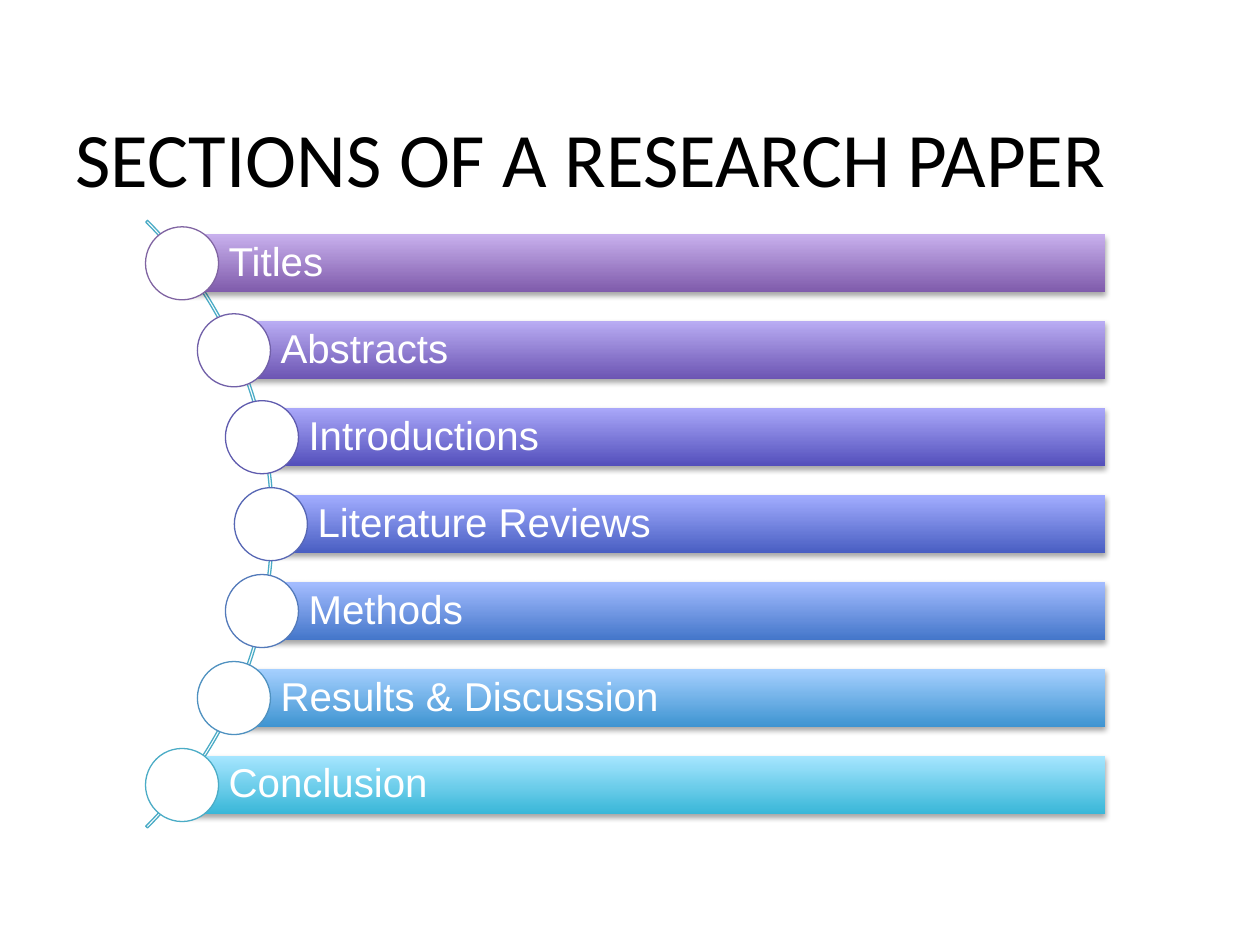
import math
from dataclasses import dataclass

from lxml import etree
from pptx import Presentation
from pptx.dml.color import RGBColor
from pptx.enum.shapes import MSO_SHAPE
from pptx.enum.text import MSO_ANCHOR, PP_ALIGN
from pptx.oxml.ns import qn
from pptx.shapes.autoshape import Shape
from pptx.slide import Slide
from pptx.util import Inches, Pt

RECTANGLE, OVAL, BLOCK_ARC = MSO_SHAPE.RECTANGLE, MSO_SHAPE.OVAL, MSO_SHAPE.BLOCK_ARC
MIDDLE, LEFT = MSO_ANCHOR.MIDDLE, PP_ALIGN.LEFT


@dataclass(frozen=True)
class Theme:
    title_font: str = "Calibri"
    body_font: str = "Arial"
    title_size: float = 44
    body_size: float = 23
    line_width: float = 0.75
    black: str = "000000"
    white: str = "FFFFFF"
    arc: str = "4BACC6"


@dataclass(frozen=True)
class Section:
    label: str
    dark: str
    light: str
    outline: str


THEME = Theme()
SECTIONS = [
    Section("Titles", "7F5BAB", "C8B0ED", "8064A2"),
    Section("Abstracts", "6C55B3", "B9ACF3", "7160A8"),
    Section("Introductions", "534FBB", "A9A7F9", "5F5BAE"),
    Section("Literature Reviews", "495EC2", "A2ADFF", "5767B4"),
    Section("Methods", "4476CA", "A4BDFF", "537ABA"),
    Section("Results & Discussion", "3E94D1", "A6D0FF", "4F91C0"),
    Section("Conclusion", "39B7D8", "A7E6FF", "4BACC6"),
]

# Lengths in inches; the circles sit on a curve around the arc's centre.
ARC_SIZE = 6.82
CENTER_X, CENTER_Y = -1.24, 4.16
CURVE_RADIUS = 3.39
PITCH = 0.69
BAR_RIGHT, BAR_HEIGHT = 8.77, 0.46
CIRCLE_SIZE = 0.58


def color(value: str) -> RGBColor:
    return RGBColor.from_string(value)


def add_shape(slide: Slide, kind: MSO_SHAPE, left: float, top: float,
              width: float, height: float) -> Shape:
    shape = slide.shapes.add_shape(
        kind, Inches(left), Inches(top), Inches(width), Inches(height))
    shape.shadow.inherit = False
    return shape


def set_outline(shape: Shape, value: str) -> None:
    shape.line.color.rgb = color(value)
    shape.line.width = Pt(THEME.line_width)


def add_soft_shadow(shape: Shape) -> None:
    effects = shape._element.spPr.find(qn("a:effectLst"))
    shadow = etree.SubElement(effects, qn("a:outerShdw"), {
        "blurRad": str(Pt(3.1)), "dist": str(Pt(1.8)),
        "dir": "5400000", "rotWithShape": "0"})
    tint = etree.SubElement(shadow, qn("a:srgbClr"), val=THEME.black)
    etree.SubElement(tint, qn("a:alpha"), val="35000")


def write_text(shape: Shape, text: str, font: str, size: float, value: str,
               margins: tuple[float, float, float, float], spacing: float) -> None:
    """Write one left-aligned line; margins are left, top, right, bottom."""
    left, top, right, bottom = map(Inches, margins)
    frame = shape.text_frame
    frame_format = {
        "word_wrap": True, "vertical_anchor": MIDDLE, "margin_left": left,
        "margin_top": top, "margin_right": right, "margin_bottom": bottom}
    for name, setting in frame_format.items():
        setattr(frame, name, setting)
    para = frame.paragraphs[0]
    para.alignment = LEFT
    para.line_spacing = spacing
    span = para.add_run()
    span.text = text
    for name, setting in {"name": font, "size": Pt(size)}.items():
        setattr(span.font, name, setting)
    span.font.color.rgb = color(value)


def add_title(slide: Slide) -> None:
    box = slide.shapes.add_textbox(Inches(0.5), Inches(0.62), Inches(9), Inches(1.25))
    write_text(box, "SECTIONS OF A RESEARCH PAPER", THEME.title_font,
               THEME.title_size, THEME.black, (0.1, 0.05, 0.1, 0.05), 1.0)


def add_arc(slide: Slide) -> None:
    arc = add_shape(slide, BLOCK_ARC, CENTER_X - ARC_SIZE / 2,
                    CENTER_Y - ARC_SIZE / 2, ARC_SIZE, ARC_SIZE)
    for index, adjustment in enumerate((189, 27, 0.003)):
        arc.adjustments[index] = adjustment
    arc.fill.background()
    set_outline(arc, THEME.arc)


def add_section(slide: Slide, section: Section, offset: float) -> None:
    """Draw a bar and its circle, offset vertically from the arc's centre."""
    x = CENTER_X + math.sqrt(CURVE_RADIUS ** 2 - offset ** 2)
    y = CENTER_Y + offset
    bar = add_shape(slide, RECTANGLE, x, y - BAR_HEIGHT / 2, BAR_RIGHT - x, BAR_HEIGHT)
    bar.fill.gradient()
    bar.fill.gradient_angle = 90
    for stop, value in zip(bar.fill.gradient_stops, (section.dark, section.light)):
        stop.color.rgb = color(value)
    bar.line.fill.background()
    add_soft_shadow(bar)
    write_text(bar, section.label, THEME.body_font, THEME.body_size,
               THEME.white, (0.37, 0.06, 0.06, 0.06), 0.9)

    circle = add_shape(slide, OVAL, x - CIRCLE_SIZE / 2, y - CIRCLE_SIZE / 2,
                       CIRCLE_SIZE, CIRCLE_SIZE)
    circle.fill.solid()
    circle.fill.fore_color.rgb = color(THEME.white)
    set_outline(circle, section.outline)


def main() -> None:
    deck = Presentation()
    deck.slide_width, deck.slide_height = Inches(10), Inches(7.5)
    page = deck.slides.add_slide(deck.slide_layouts[6])
    add_title(page)
    add_arc(page)
    middle = (len(SECTIONS) - 1) / 2
    for index, section in enumerate(SECTIONS):
        add_section(page, section, (index - middle) * PITCH)
    deck.save("out.pptx")


if __name__ == "__main__":
    main()
